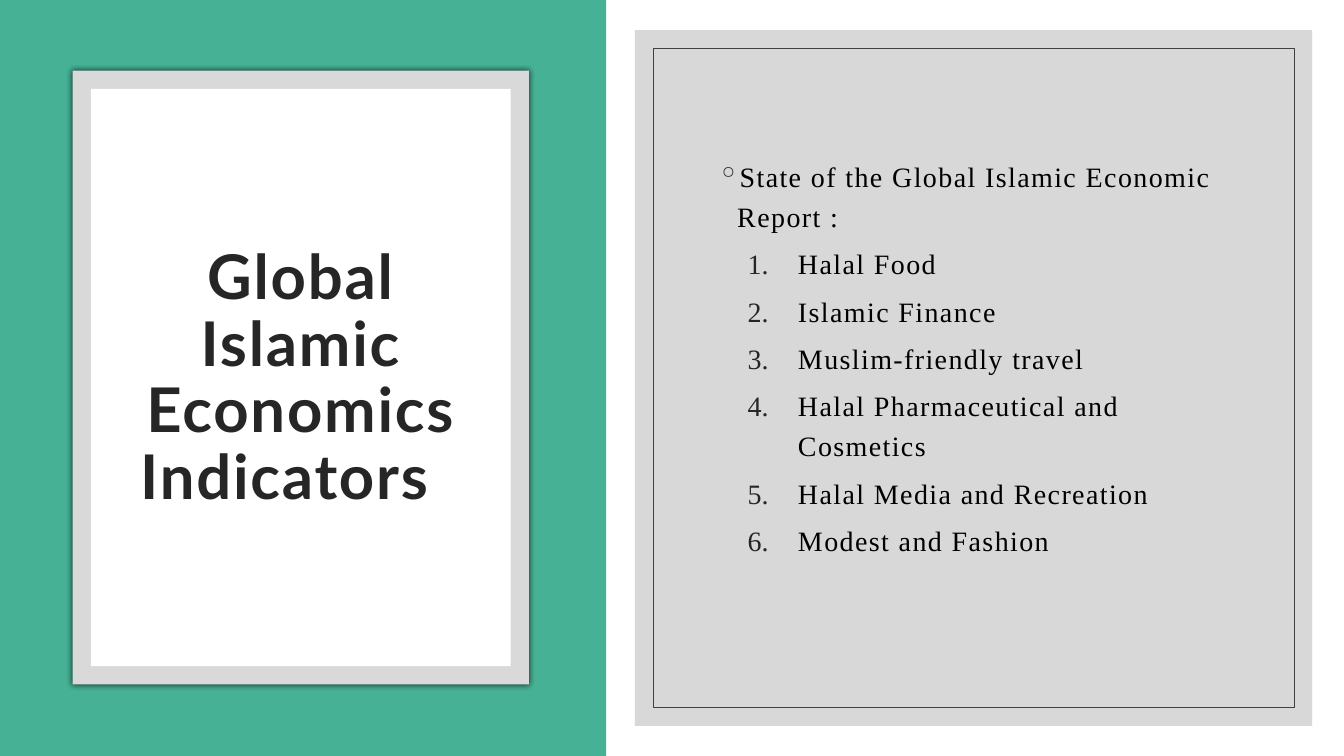
from pptx import Presentation
from pptx.dml.color import RGBColor
from pptx.enum import shapes, text
from pptx.oxml import parse_xml
from pptx.oxml.ns import nsdecls
from pptx.util import Cm, Pt

COLORS = {
    "green": "46B195",
    "white": "FFFFFF",
    "frame": "D9D9D9",
    "panel": "BFBFBF",
    "outline": "404040",
    "heading": "262626",
    "body": "000000",
}
SECTORS = [
    "Halal Food",
    "Islamic Finance",
    "Muslim-friendly travel",
    "Halal Pharmaceutical and Cosmetics",
    "Halal Media and Recreation",
    "Modest and Fashion",
]
FRAME_GAP = 0.46


def color(name):
    return RGBColor.from_string(COLORS[name])


def inset(box, gap):
    left, top, width, height = box
    return left + gap, top + gap, width - 2 * gap, height - 2 * gap


def add_rectangle(page, box, fill=None, line=None):
    shape = page.shapes.add_shape(
        shapes.MSO_SHAPE.RECTANGLE, *[Cm(length) for length in box])
    shape.shadow.inherit = False
    if fill:
        shape.fill.solid()
        shape.fill.fore_color.rgb = color(fill)
    else:
        shape.fill.background()
    if line:
        shape.line.color.rgb = color(line)
        shape.line.width = Pt(0.5)
    else:
        shape.line.fill.background()
    return shape


def add_glow_shadow(shape):
    properties = shape.element.spPr
    effects = properties.find("{*}effectLst")
    effects.append(parse_xml(
        f'<a:outerShdw {nsdecls("a")} blurRad="{Pt(4)}" dist="0" dir="0" algn="ctr" '
        'rotWithShape="0"><a:srgbClr val="000000"><a:alpha val="66000"/></a:srgbClr>'
        '</a:outerShdw>'))


def make_translucent(shape, percent):
    fill_color = shape.element.spPr.find("{*}solidFill/{*}srgbClr")
    fill_color.append(parse_xml(
        f'<a:alpha {nsdecls("a")} val="{percent * 1000}"/>'))


def format_frame(frame, bottom):
    frame.word_wrap = True
    frame.auto_size = text.MSO_AUTO_SIZE.NONE
    frame.vertical_anchor = text.MSO_ANCHOR.MIDDLE
    frame.margin_left = frame.margin_right = frame.margin_top = Cm(0.3)
    frame.margin_bottom = Cm(bottom)


def add_span(para, words, font, size, ink, spacing, bold=False):
    span = para.add_run()
    span.text = words
    span.font.name = font
    span.font.size = Pt(size)
    span.font.bold = bold
    span.font.color.rgb = color(ink)
    span._r.get_or_add_rPr().set("spc", str(spacing))


def add_item(para, words, bullet, level, before, indent, hanging):
    para.level = level
    para.line_spacing = 1.2
    para.space_before = Pt(before)
    para.alignment = text.PP_ALIGN.LEFT
    properties = para._p.get_or_add_pPr()
    properties.set("marL", str(Cm(indent)))
    properties.set("indent", str(-Cm(hanging)))
    properties.append(parse_xml(
        f'<a:buClr {nsdecls("a")}><a:srgbClr val="{COLORS["heading"]}"/></a:buClr>'))
    properties.append(parse_xml(f'<a:{bullet} {nsdecls("a")}/>'.replace("'", '"')))
    add_span(para, words, "Times New Roman", 20, "body", 100)


def build_title_side(page, box):
    left, top, width, height = box
    add_rectangle(page, box, "green")
    card = left + 1.83, top + 1.78, 11.5, height - 3.58
    add_glow_shadow(add_rectangle(page, card, "frame"))
    add_rectangle(page, inset(card, FRAME_GAP), "white")

    title = page.shapes.title
    title.left, title.top = Cm(left + 2.74), Cm(top + 3.3)
    title.width, title.height = Cm(9.7), Cm(12.47)
    title.element.getparent().append(title.element)
    format_frame(title.text_frame, 0.25)
    para = title.text_frame.paragraphs[0]
    para.alignment = text.PP_ALIGN.CENTER
    para.line_spacing = 0.9
    add_span(para, "Global Islamic Economics Indicators  ",
             "Lato", 44, "heading", 130, bold=True)


def build_report_side(page, box):
    left, top, width, height = box
    make_translucent(add_rectangle(page, box, "panel"), 60)
    add_rectangle(page, inset(box, FRAME_GAP), line="outline")

    report = page.shapes.add_textbox(
        Cm(left + 1.78), Cm(top + 1.83), Cm(13.54), Cm(13.85))
    frame = report.text_frame
    format_frame(frame, 1.45)
    add_item(frame.paragraphs[0], "State of the Global Islamic Economic Report :",
             'buChar char="◦"', 0, 9, 0.5, 0.5)
    for sector in SECTORS:
        add_item(frame.add_paragraph(), sector,
                 'buAutoNum type="arabicPeriod"', 1, 5, 2.03, 1.27)


def main():
    deck = Presentation()
    deck.slide_width, deck.slide_height = Cm(33.87), Cm(19.05)
    page = deck.slides.add_slide(deck.slide_layouts.get_by_name("Title Only"))
    page.background.fill.solid()
    page.background.fill.fore_color.rgb = color("white")
    build_title_side(page, (0, 0, 15.28, 19.05))
    build_report_side(page, (16, 0.76, 17.07, 17.53))
    deck.save("out.pptx")


if __name__ == "__main__":
    main()
